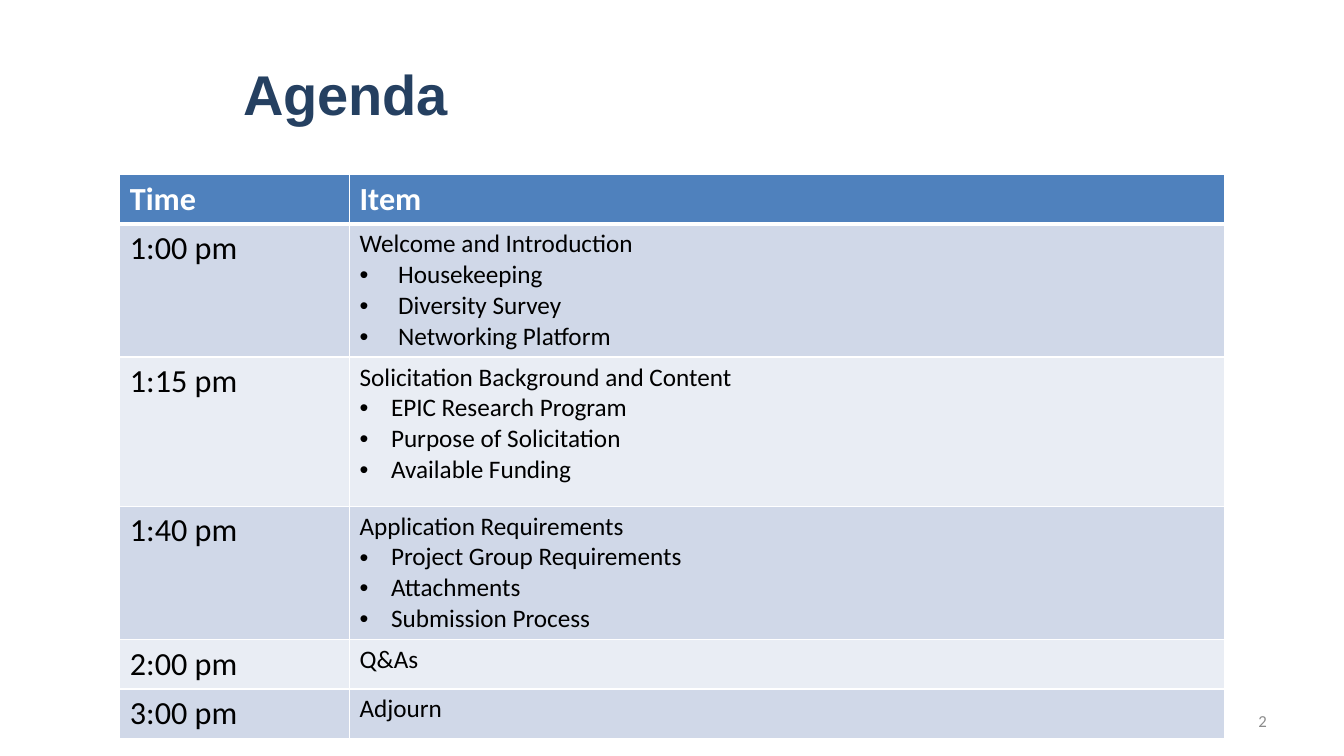
from lxml import etree
from pptx import Presentation
from pptx.dml.color import RGBColor
from pptx.enum import text
from pptx.oxml import ns
from pptx.util import Cm, Pt

WHITE, BLACK = "FFFFFF", "000000"
HEADER_FILL, DARK_BAND, LIGHT_BAND = "4F81BD", "D0D8E8", "E9EDF4"

TITLE_FONT = {"name": "Arial", "size": Pt(40), "bold": True}
HEADER_FONT = {"name": "Calibri", "size": Pt(23), "bold": True}
TIME_FONT = {"name": "Calibri", "size": Pt(23), "bold": False}
ITEM_FONT = {"name": "Calibri", "size": Pt(18), "bold": False}
NUMBER_FONT = {"name": "Calibri", "size": Pt(12)}

COLUMN_WIDTHS = [5.79, 22.05]
HEADER_HEIGHT = 1.23
AGENDA = [
    ("1:00 pm", 3.35, "Welcome and Introduction", 0.97,
     ["Housekeeping", "Diversity Survey", "Networking Platform"]),
    ("1:15 pm", 3.76, "Solicitation Background and Content", 0.79,
     ["EPIC Research Program", "Purpose of Solicitation", "Available Funding"]),
    ("1:40 pm", 3.35, "Application Requirements", 0.79,
     ["Project Group Requirements", "Attachments", "Submission Process"]),
    ("2:00 pm", 1.23, "Q&As", 0, []),
    ("3:00 pm", 1.23, "Adjourn", 0, []),
]


def set_color(color_format, hex_color):
    color_format.rgb = RGBColor.from_string(hex_color)


def set_values(target, values):
    for name, value in values.items():
        setattr(target, name, value)


def write(paragraph, wording, font_values, color):
    run = paragraph.add_run()
    run.text = wording
    set_values(run.font, font_values)
    set_color(run.font.color, color)


def add_bullet(paragraph, indent):
    properties = paragraph._p.get_or_add_pPr()
    properties.set("marL", str(Cm(indent)))
    properties.set("indent", str(-Cm(indent)))
    etree.SubElement(properties, ns.qn("a:buFont")).set("typeface", "Arial")
    etree.SubElement(properties, ns.qn("a:buChar")).set("char", "•")


def style_cell(cell, fill, top=1, bottom=1):
    properties = cell._tc.get_or_add_tcPr()
    for side, width in {"L": 1, "R": 1, "T": top, "B": bottom}.items():
        border = etree.SubElement(properties, ns.qn(f"a:ln{side}"), w=str(Pt(width)))
        line_fill = etree.SubElement(border, ns.qn("a:solidFill"))
        etree.SubElement(line_fill, ns.qn("a:srgbClr"), val=WHITE)
    cell.fill.solid()
    set_color(cell.fill.fore_color, fill)


def add_title(slide, wording):
    title = slide.shapes.title
    set_values(title, {"left": Cm(5.87), "top": Cm(0.76),
                       "width": Cm(19.84), "height": Cm(3.18)})
    title.text_frame.vertical_anchor = text.MSO_ANCHOR.MIDDLE
    heading = title.text_frame.paragraphs[0]
    heading.alignment = text.PP_ALIGN.LEFT
    write(heading, wording, TITLE_FONT, "254061")


def add_agenda(slide):
    heights = [HEADER_HEIGHT] + [row[1] for row in AGENDA]
    agenda = slide.shapes.add_table(
        len(heights), len(COLUMN_WIDTHS), Cm(3.02), Cm(4.39),
        Cm(sum(COLUMN_WIDTHS)), Cm(sum(heights))).table
    for column, width in zip(agenda.columns, COLUMN_WIDTHS):
        column.width = Cm(width)
    for row, height in zip(agenda.rows, heights):
        row.height = Cm(height)

    for column, label in enumerate(["Time", "Item"]):
        header = agenda.cell(0, column)
        style_cell(header, HEADER_FILL, bottom=3)
        write(header.text_frame.paragraphs[0], label, HEADER_FONT, WHITE)

    for number, (time, _, item, indent, topics) in enumerate(AGENDA, 1):
        time_cell, item_cell = agenda.cell(number, 0), agenda.cell(number, 1)
        for cell in (time_cell, item_cell):
            style_cell(cell, DARK_BAND if number % 2 else LIGHT_BAND,
                       top=3 if number == 1 else 1)
        write(time_cell.text_frame.paragraphs[0], time, TIME_FONT, BLACK)
        write(item_cell.text_frame.paragraphs[0], item, ITEM_FONT, BLACK)
        for topic in topics:
            paragraph = item_cell.text_frame.add_paragraph()
            add_bullet(paragraph, indent)
            write(paragraph, topic, ITEM_FONT, BLACK)


def add_page_number(slide, number):
    frame = slide.shapes.add_textbox(
        Cm(24.28), Cm(17.65), Cm(7.9), Cm(1.02)).text_frame
    set_values(frame, {"word_wrap": True,
                       "vertical_anchor": text.MSO_ANCHOR.MIDDLE})
    paragraph = frame.paragraphs[0]
    paragraph.alignment = text.PP_ALIGN.RIGHT
    write(paragraph, number, NUMBER_FONT, "8C8C8C")


def main():
    deck = Presentation()
    set_values(deck, {"slide_width": Cm(33.87), "slide_height": Cm(19.05)})
    slide = deck.slides.add_slide(deck.slide_layouts.get_by_name("Title Only"))
    add_title(slide, "Agenda")
    add_agenda(slide)
    add_page_number(slide, "2")
    deck.save("out.pptx")


if __name__ == "__main__":
    main()
